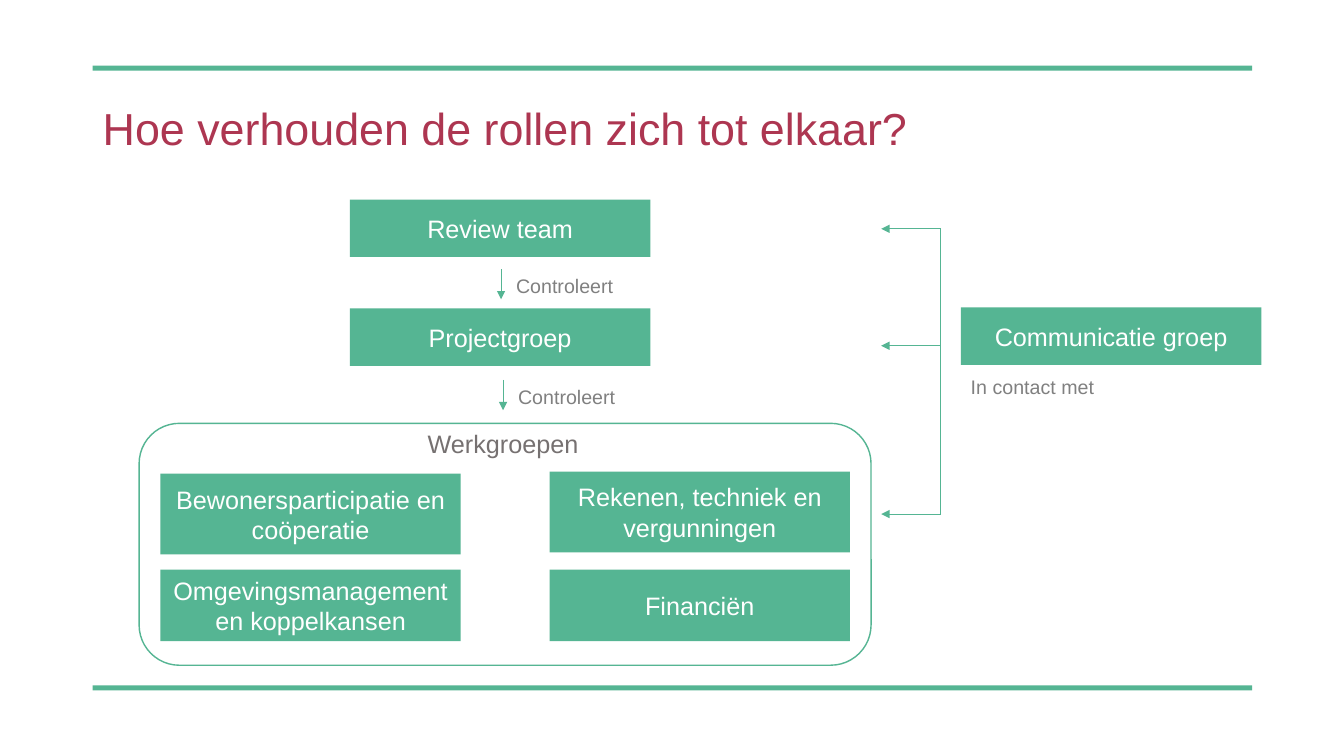
"""Build a slide showing how the project's roles relate to each other."""
from dataclasses import dataclass

from lxml.etree import SubElement
from pptx import Presentation
from pptx.dml.color import RGBColor
from pptx.enum.shapes import MSO_CONNECTOR, MSO_SHAPE
from pptx.enum.text import MSO_ANCHOR, PP_ALIGN
from pptx.oxml.ns import qn
from pptx.util import Inches, Pt


@dataclass(frozen=True)
class Theme:
    font: str = "Arial"
    green: str = "55B593"
    red: str = "AD3651"
    white: str = "FFFFFF"
    grey: str = "808080"
    dark: str = "767171"
    title: int = 32
    body: int = 18
    label: int = 14
    thin: float = 0.5
    frame: float = 1


T = Theme()
W, H = 13.33, 7.5
MARGIN, RULE_W, RULE_H = 0.92, 11.5, 0.05
RULE_ROWS = (0.65, 6.8)
BOX_W, BOX_H = 2.98, 0.57
COLS = {"left": 1.59, "middle": 3.47, "right": 5.45, "side": 9.53}

TITLE = "Hoe verhouden de rollen zich tot elkaar?"
BOXES = [
    ("Review team", "middle", 1.98, BOX_H),
    ("Projectgroep", "middle", 3.06, BOX_H),
    ("Communicatie groep", "side", 3.05, BOX_H),
    ("Bewonersparticipatie en coöperatie", "left", 4.7, 0.8),
    ("Rekenen, techniek en vergunningen", "right", 4.68, 0.8),
    ("Omgevingsmanagement en koppelkansen", "left", 5.65, 0.71),
    ("Financiën", "right", 5.65, 0.71),
]
GROUP = ("Werkgroepen", 1.38, 4.2, 7.26, 2.4)
CHECKS = [("Controleert", 4.97, 2.67), ("Controleert", 4.99, 3.77)]
CHECK_LEN = 0.3
CONTACT = ("In contact met", COLS["side"], 3.67, 1.57)
TRUNK_X, ARROW_X = 9.33, 8.74
BRANCH_ROWS = (2.27, 3.43, 5.1)

prs = Presentation()
prs.slide_width, prs.slide_height = Inches(W), Inches(H)
s = prs.slides.add_slide(prs.slide_layouts[6])


def write(sp, text, size=T.body, color=T.white, align=PP_ALIGN.CENTER,
          anchor=MSO_ANCHOR.MIDDLE, spacing=None):
    tf = sp.text_frame
    tf.word_wrap = True
    tf.vertical_anchor = anchor
    p = tf.paragraphs[0]
    p.alignment = align
    p.line_spacing = spacing
    r = p.add_run()
    r.text = text
    r.font.name, r.font.size = T.font, Pt(size)
    r.font.color.rgb = RGBColor.from_string(color)


def add_text(text, x, y, w, h, **fmt):
    write(s.shapes.add_textbox(*map(Inches, (x, y, w, h))), text, **fmt)


def add_block(x, y, w, h, shape=MSO_SHAPE.RECTANGLE, outlined=False):
    sp = s.shapes.add_shape(shape, *map(Inches, (x, y, w, h)))
    sp.shadow.inherit = False
    green = RGBColor.from_string(T.green)
    if outlined:
        sp.fill.background()
        sp.line.color.rgb, sp.line.width = green, Pt(T.frame)
    else:
        sp.fill.solid()
        sp.fill.fore_color.rgb = green
        sp.line.fill.background()
    return sp


def add_line(x1, y1, x2, y2, arrow=True):
    c = s.shapes.add_connector(MSO_CONNECTOR.STRAIGHT, *map(Inches, (x1, y1, x2, y2)))
    c.line.color.rgb, c.line.width = RGBColor.from_string(T.green), Pt(T.thin)
    if arrow:
        SubElement(c.line._get_or_add_ln(), qn("a:tailEnd"), type="triangle")
    SubElement(c._element.spPr, qn("a:effectLst"))


for y in RULE_ROWS:
    add_block(MARGIN, y, RULE_W, RULE_H)
add_text(TITLE, MARGIN, 0.75, RULE_W, 1.1, size=T.title, color=T.red,
         align=PP_ALIGN.LEFT, spacing=0.9)

for text, col, y, h in BOXES:
    write(add_block(COLS[col], y, BOX_W, h), text)

name, x, y, w, h = GROUP
add_block(x, y, w, h, MSO_SHAPE.ROUNDED_RECTANGLE, outlined=True)
add_text(name, COLS["middle"], y, BOX_W + 0.06, 0.4, color=T.dark, anchor=MSO_ANCHOR.TOP)

note = dict(size=T.label, color=T.grey, align=PP_ALIGN.LEFT, anchor=MSO_ANCHOR.TOP)
for text, x, y in CHECKS:
    add_line(x, y, x, y + CHECK_LEN)
    add_text(text, x + 0.05, y, 2.86, 0.34, **note)

add_line(TRUNK_X, BRANCH_ROWS[0], TRUNK_X, BRANCH_ROWS[-1], arrow=False)
for y in BRANCH_ROWS:
    add_line(TRUNK_X, y, ARROW_X, y)
text, x, y, w = CONTACT
add_text(text, x, y, w, 0.34, **note)

prs.save("out.pptx")
